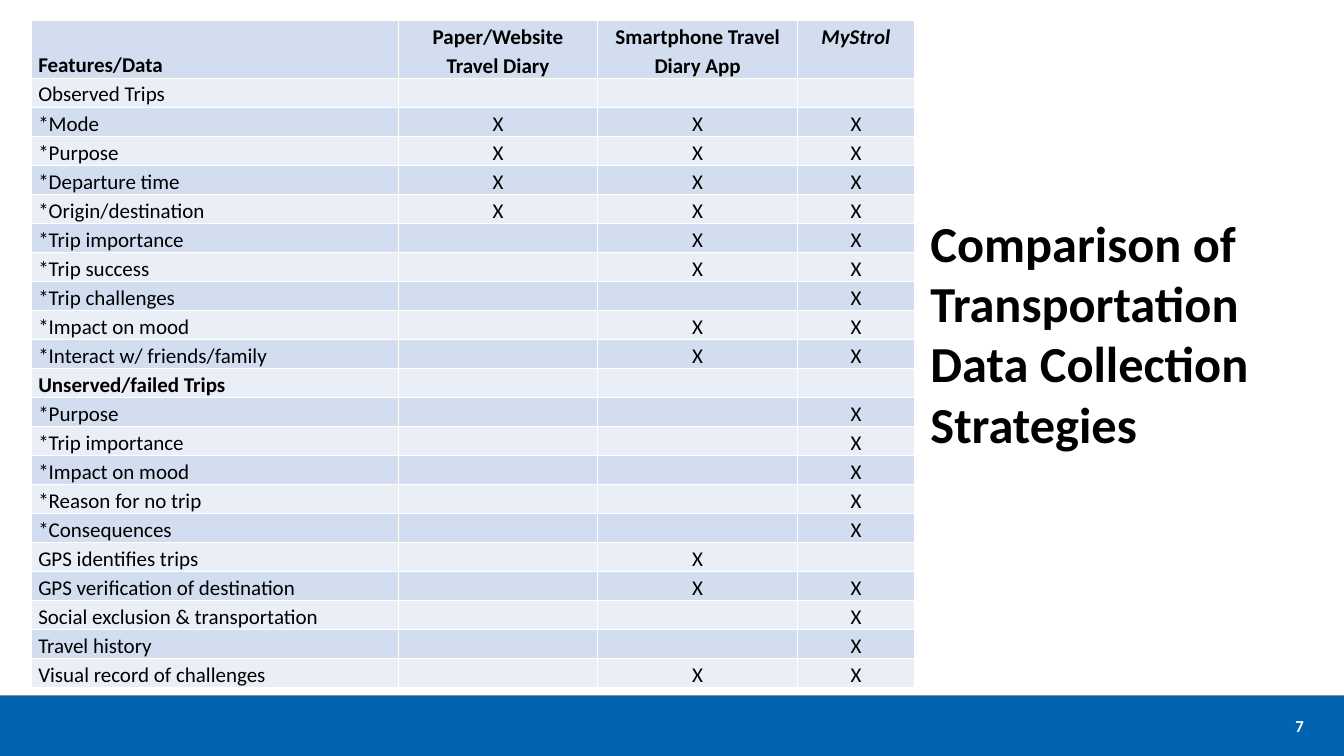
import pptx
import pptx.util
import pptx.dml.color
import pptx.enum.shapes
import pptx.enum.text
import pptx.oxml
import pptx.oxml.ns

Inches = pptx.util.Inches
Pt = pptx.util.Pt
Align = pptx.enum.text.PP_ALIGN
Anchor = pptx.enum.text.MSO_ANCHOR

COLORS = {"text": "000000", "white": "FFFFFF", "band": "0064B1",
          "dark": "D2DEEF", "light": "EAEFF7"}
FONT = "Calibri"
COLS = [3.64, 1.98, 1.98, 1.16]
HEAD = ["Features/Data", "Paper/Website Travel Diary",
        "Smartphone Travel Diary App", "MyStrol"]
GROUP = "Unserved/failed Trips"
ROWS = [
    ("Observed Trips", "   "),
    ("*Mode", "XXX"),
    ("*Purpose", "XXX"),
    ("*Departure time", "XXX"),
    ("*Origin/destination", "XXX"),
    ("*Trip importance", " XX"),
    ("*Trip success", " XX"),
    ("*Trip challenges", "  X"),
    ("*Impact on mood", " XX"),
    ("*Interact w/ friends/family", " XX"),
    (GROUP, "   "),
    ("*Purpose", "  X"),
    ("*Trip importance", "  X"),
    ("*Impact on mood", "  X"),
    ("*Reason for no trip", "  X"),
    ("*Consequences", "  X"),
    ("GPS identifies trips", " X "),
    ("GPS verification of destination", " XX"),
    ("Social exclusion & transportation", "  X"),
    ("Travel history", "  X"),
    ("Visual record of challenges", " XX"),
]


def color(name):
    return pptx.dml.color.RGBColor.from_string(COLORS[name])


def style(para, size, tint="text", bold=False, slant=False):
    for run in para.runs:
        font = run.font
        font.name = FONT
        font.size = Pt(size)
        font.bold = bold
        font.italic = slant
        font.color.rgb = color(tint)


def border(cell):
    props = cell._tc.get_or_add_tcPr()
    space = pptx.oxml.ns.nsdecls("a")
    for spot, side in enumerate("LRTB"):
        line = pptx.oxml.parse_xml(
            f'<a:ln{side} {space} w="12700"><a:solidFill>'
            f'<a:srgbClr val="{COLORS["white"]}"/></a:solidFill></a:ln{side}>')
        props.insert(spot, line)


def fill_cell(cell, text, row, col):
    cell.margin_left = cell.margin_right = Inches(0.07)
    cell.margin_top = cell.margin_bottom = 0
    cell.fill.solid()
    cell.fill.fore_color.rgb = color("light" if row % 2 else "dark")
    border(cell)
    para = cell.text_frame.paragraphs[0]
    para.text = text
    para.line_spacing = 1.15
    if col:
        para.alignment = Align.CENTER
    elif row == 0:
        cell.vertical_anchor = Anchor.BOTTOM
    style(para, 15, bold=row == 0 or text == GROUP,
          slant=row == 0 and col == 3)
    if not text:
        para._p.append(pptx.oxml.parse_xml(
            f'<a:endParaRPr {pptx.oxml.ns.nsdecls("a")} sz="1500">'
            f'<a:latin typeface="{FONT}"/></a:endParaRPr>'))


def add_grid(slide, left, top, width, height):
    data = [HEAD] + [[name] + [mark.strip() for mark in marks]
                     for name, marks in ROWS]
    grid = slide.shapes.add_table(
        len(data), len(COLS), Inches(left), Inches(top),
        Inches(width), Inches(height)).table
    grid.first_row = False
    grid.horz_banding = False
    for col, wide in enumerate(COLS):
        grid.columns[col].width = Inches(wide)
    for row, items in enumerate(data):
        grid.rows[row].height = Inches(0.28 if row else 0.56)
        for col, text in enumerate(items):
            fill_cell(grid.cell(row, col), text, row, col)


def add_text(slide, left, top, width, height, text, size, tint="text"):
    box = slide.shapes.add_textbox(
        Inches(left), Inches(top), Inches(width), Inches(height))
    frame = box.text_frame
    frame.word_wrap = True
    frame.text = text
    style(frame.paragraphs[0], size, tint, bold=True)
    return frame


def add_foot(slide, left, top, width, height):
    band = slide.shapes.add_shape(
        pptx.enum.shapes.MSO_SHAPE.RECTANGLE,
        Inches(left), Inches(top), Inches(width), Inches(height))
    band.shadow.inherit = False
    band.fill.solid()
    band.fill.fore_color.rgb = color("band")
    band.line.fill.background()
    frame = add_text(slide, left + width - 0.88, top + 0.1, 0.58, 0.4,
                     "7", 12, "white")
    frame.vertical_anchor = Anchor.MIDDLE
    frame.paragraphs[0].alignment = Align.RIGHT


def main():
    deck = pptx.Presentation()
    deck.slide_width = Inches(13.33)
    deck.slide_height = Inches(7.5)
    slide = deck.slides.add_slide(deck.slide_layouts[6])
    add_foot(slide, 0, 6.9, 13.33, 0.6)
    add_grid(slide, 0.31, 0.2, 8.75, 6.61)
    add_text(slide, 9.13, 2.05, 3.61, 2.52,
             "Comparison of Transportation Data Collection Strategies", 36)
    deck.save("out.pptx")


if __name__ == "__main__":
    main()
